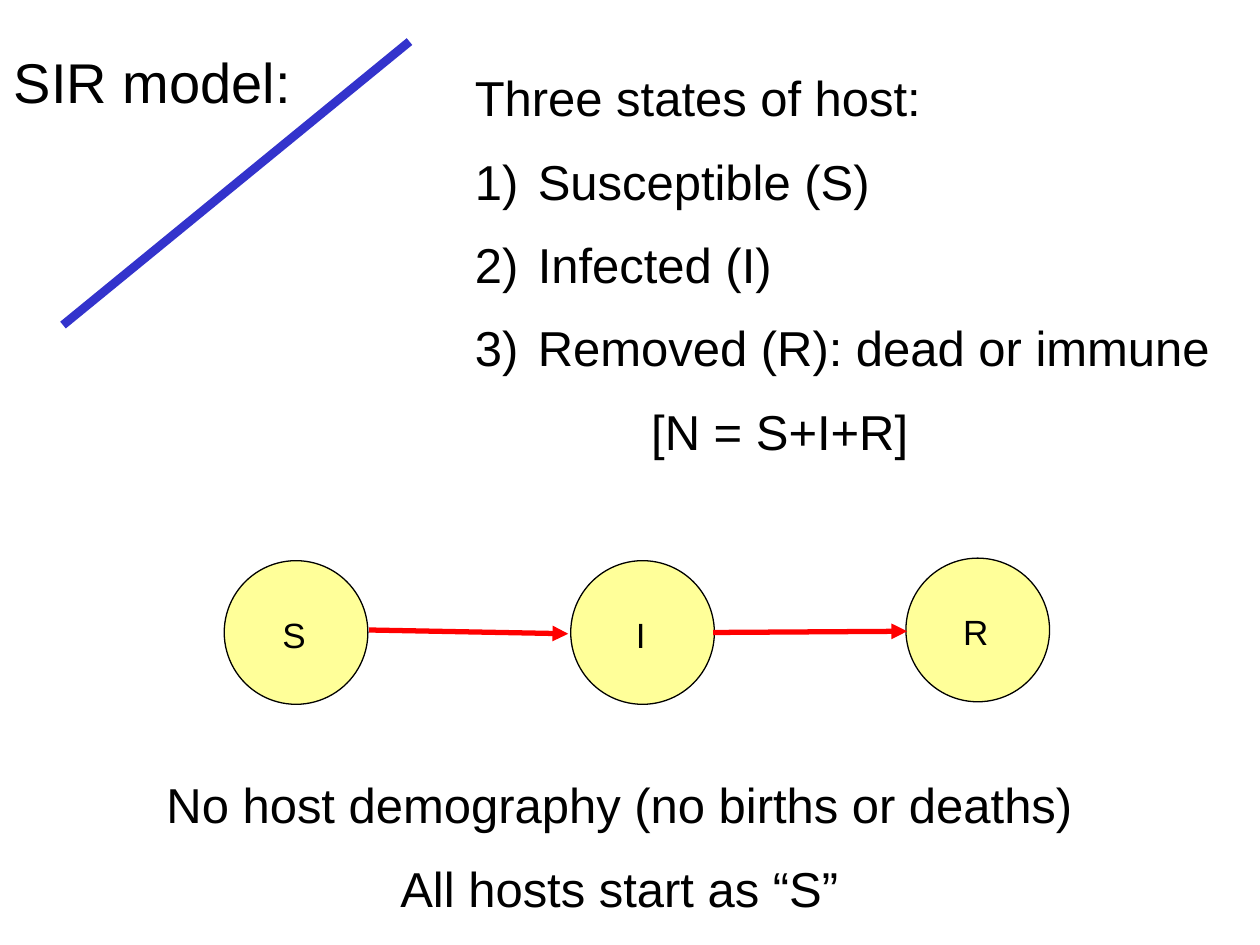
from lxml.etree import SubElement
from pptx import Presentation
from pptx.dml.color import RGBColor
from pptx.enum.shapes import MSO_CONNECTOR as Connector, MSO_SHAPE as Shape
from pptx.enum.text import MSO_AUTO_SIZE as AutoSize, PP_ALIGN as Align
from pptx.oxml.ns import qn
from pptx.util import Inches, Pt

BLACK = RGBColor(0x00, 0x00, 0x00)
BLUE = RGBColor(0x33, 0x33, 0xCC)
RED = RGBColor(0xFF, 0x00, 0x00)
YELLOW = RGBColor(0xFF, 0xFF, 0x99)

TITLE = "SIR model:"
STATES = [
    ("Three states of host:", 0.5, -0.5, False),
    ("Susceptible (S)", 0.5, -0.5, True),
    ("Infected (I)", 0.5, -0.5, True),
    ("Removed (R): dead or immune", 0.5, -0.5, True),
    ("[N = S+I+R]", 1.4, 0, False),
]
ASSUMPTIONS = ["No host demography (no births or deaths)", "All hosts start as “S”"]
COMPARTMENTS = [("S", 1.78, 4.45), ("I", 4.53, 4.45), ("R", 7.19, 4.43)]
TRANSITIONS = [((2.93, 5), (4.51, 5.03)), ((5.66, 5.02), (7.2, 5.01))]
DIAMETER = 1.14


def add_text(page, lines, left, top, width, height, size=28, align=Align.CENTER):
    box = page.shapes.add_textbox(Inches(left), Inches(top), Inches(width), Inches(height))
    frame = box.text_frame
    frame.word_wrap = True
    frame.auto_size = AutoSize.SHAPE_TO_FIT_TEXT
    for index, line in enumerate(lines):
        text, margin, indent, numbered = (line, 0, 0, False) if isinstance(line, str) else line
        para = frame.paragraphs[0] if index == 0 else frame.add_paragraph()
        para.alignment = align
        span = para.add_run()
        span.text = text
        span.font.name = "Arial"
        span.font.size = Pt(size)
        span.font.color.rgb = BLACK
        props = para._p.get_or_add_pPr()
        props.set("marL", str(Inches(margin)))
        props.set("indent", str(Inches(indent)))
        before = SubElement(props, qn("a:spcBef"))
        SubElement(before, qn("a:spcPct"), val="50000")
        if numbered:
            SubElement(props, qn("a:buFontTx"))
            SubElement(props, qn("a:buAutoNum"), type="arabicParenR")


def add_line(page, start, end, color, width, arrow=False):
    line = page.shapes.add_connector(
        Connector.STRAIGHT, *(Inches(value) for value in (*start, *end)))
    line.line.color.rgb = color
    line.line.width = Pt(width)
    if arrow:
        SubElement(line.line._get_or_add_ln(), qn("a:tailEnd"), type="triangle")
    SubElement(line._element.spPr, qn("a:effectLst"))


def add_compartment(page, label, left, top):
    circle = page.shapes.add_shape(
        Shape.OVAL, Inches(left), Inches(top), Inches(DIAMETER), Inches(DIAMETER))
    circle.shadow.inherit = False
    circle.fill.solid()
    circle.fill.fore_color.rgb = YELLOW
    circle.line.color.rgb = BLACK
    circle.line.width = Pt(0.75)
    add_text(page, [label], left - 0.03, top + 0.37, 1.17, 0.43, size=20)


def main():
    deck = Presentation()
    deck.slide_width, deck.slide_height = Inches(10), Inches(7.5)
    page = deck.slides.add_slide(deck.slide_layouts[6])
    add_line(page, (3.25, 0.33), (0.5, 2.58), BLUE, 5)
    add_text(page, [TITLE], 0, 0.33, 2.42, 0.64, size=32)
    for label, left, top in COMPARTMENTS:
        add_compartment(page, label, left, top)
    for start, end in TRANSITIONS:
        add_line(page, start, end, RED, 3, arrow=True)
    add_text(page, STATES, 3.67, 0.49, 6.58, 3.37, align=Align.LEFT)
    add_text(page, ASSUMPTIONS, 0.5, 6.1, 8.83, 1.27)
    deck.save("out.pptx")


if __name__ == "__main__":
    main()
